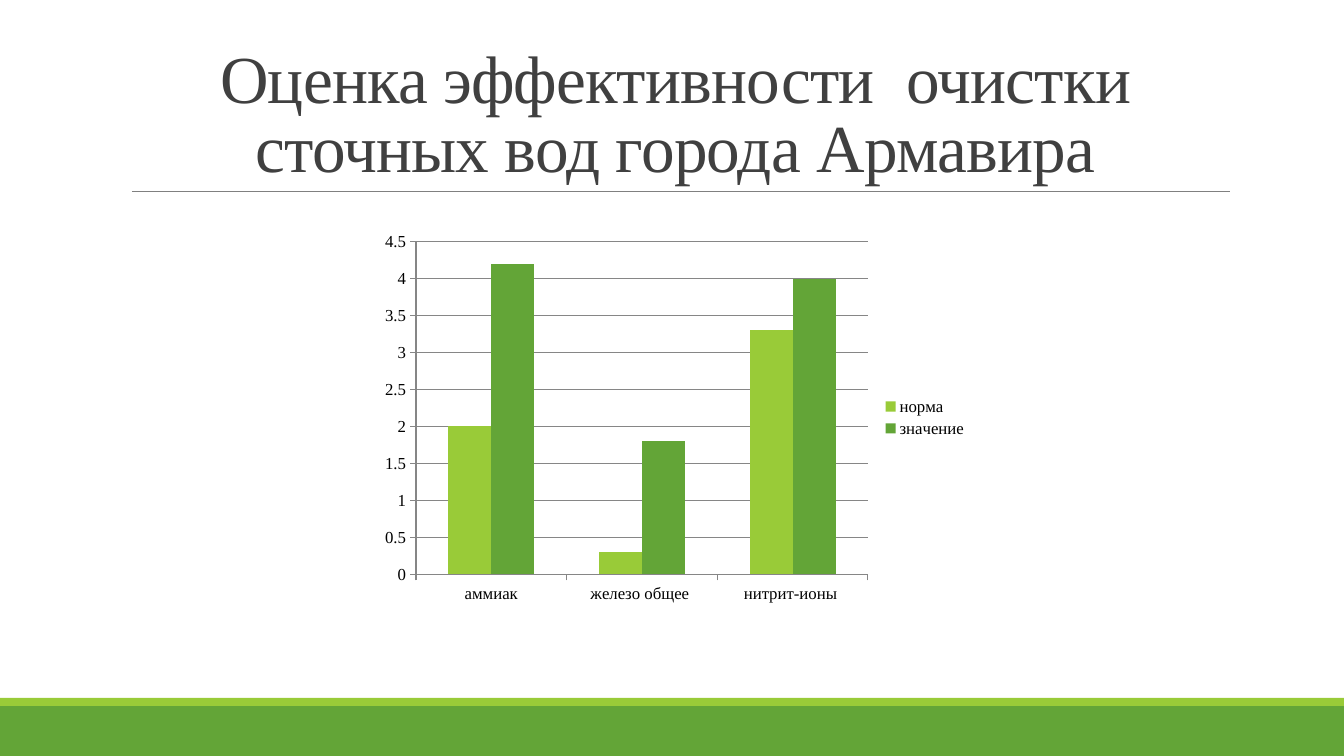
"""Build the slide on how well the city's waste water is treated."""
from lxml import etree
from pptx import Presentation
from pptx import util as u
from pptx.chart.data import CategoryChartData
from pptx.dml.color import RGBColor
from pptx.enum import chart as ch, shapes, text
from pptx.oxml.ns import qn

LIME = RGBColor(0x99, 0xCB, 0x38)
GREEN = RGBColor(0x63, 0xA5, 0x37)
GREY = RGBColor(0x80, 0x80, 0x80)
AXIS_GREY = RGBColor(0x86, 0x86, 0x86)
DARK = RGBColor(0x40, 0x40, 0x40)
BLACK = RGBColor(0, 0, 0)
FONT = "Times New Roman"

SLIDE = (1344, 756)
BANDS = [((0, 706, 1344, 50), GREEN), ((0, 698, 1344, 8), LIME)]
RULE = (132, 191, 1230, 191)
HEADING = "Оценка эффективности  очистки сточных вод города Армавира"
HEADING_BOX = (121, 31, 1109, 160)
CHART_BOX = (373, 225, 605, 385)
SUBSTANCES = ["аммиак", "железо общее ", "нитрит-ионы "]
LEVELS = [("норма", (2, 0.3, 3.3), LIME), ("значение", (4.2, 1.8, 4), GREEN)]

HEADING_FORMAT = {"name": FONT, "size": u.Pt(48)}
CHART_FORMAT = {"name": FONT, "size": u.Pt(12)}
VALUE_SCALE = {"minimum_scale": 0, "maximum_scale": 4.5, "major_unit": 0.5}


def px(*lengths):
    return [round(n * u.Inches(1) / 100.8) for n in lengths]


def assign(target, values):
    for name, value in values.items():
        setattr(target, name, value)


def add_bands(slide):
    for box, color in BANDS:
        band = slide.shapes.add_shape(shapes.MSO_SHAPE.RECTANGLE, *px(*box))
        band.shadow.inherit = False
        band.fill.solid()
        band.fill.fore_color.rgb = color
        band.line.fill.background()


def add_rule(slide):
    rule = slide.shapes.add_connector(shapes.MSO_CONNECTOR.STRAIGHT, *px(*RULE))
    rule.line.color.rgb = GREY
    rule.line.width = u.Pt(0.5)
    etree.SubElement(rule._element.spPr, qn("a:effectLst"))


def add_heading(slide):
    frame = slide.shapes.add_textbox(*px(*HEADING_BOX)).text_frame
    assign(frame, {"word_wrap": True, "vertical_anchor": text.MSO_ANCHOR.BOTTOM})
    line = frame.paragraphs[0]
    assign(line, {"alignment": text.PP_ALIGN.CENTER, "line_spacing": 0.85})
    heading = line.add_run()
    heading.text = HEADING
    assign(heading.font, HEADING_FORMAT)
    heading.font.color.rgb = DARK
    heading.font._element.set("spc", "-50")


def add_levels_chart(slide):
    data = CategoryChartData()
    data.categories = SUBSTANCES
    for name, values, _ in LEVELS:
        data.add_series(name, values)
    chart = slide.shapes.add_chart(
        ch.XL_CHART_TYPE.COLUMN_CLUSTERED, *px(*CHART_BOX), data).chart
    assign(chart, {"has_title": False, "has_legend": True})
    assign(chart.font, CHART_FORMAT)
    chart.font.color.rgb = BLACK
    assign(chart.legend, {"position": ch.XL_LEGEND_POSITION.RIGHT,
                          "include_in_layout": False})

    plot = chart.plots[0]
    assign(plot, {"gap_width": 150, "overlap": 0, "vary_by_categories": False})
    for series, (_, _, color) in zip(plot.series, LEVELS):
        series.format.fill.solid()
        series.format.fill.fore_color.rgb = color

    assign(chart.value_axis, VALUE_SCALE)
    chart.value_axis.has_major_gridlines = True
    for axis in (chart.category_axis, chart.value_axis):
        axis.major_tick_mark = ch.XL_TICK_MARK.OUTSIDE
    for part in (chart.category_axis, chart.value_axis,
                 chart.value_axis.major_gridlines):
        part.format.line.color.rgb = AXIS_GREY
        part.format.line.width = u.Pt(0.75)


def main():
    deck = Presentation()
    deck.slide_width, deck.slide_height = px(*SLIDE)
    slide = deck.slides.add_slide(deck.slide_layouts[6])
    add_bands(slide)
    add_rule(slide)
    add_heading(slide)
    add_levels_chart(slide)
    deck.save("out.pptx")


if __name__ == "__main__":
    main()
